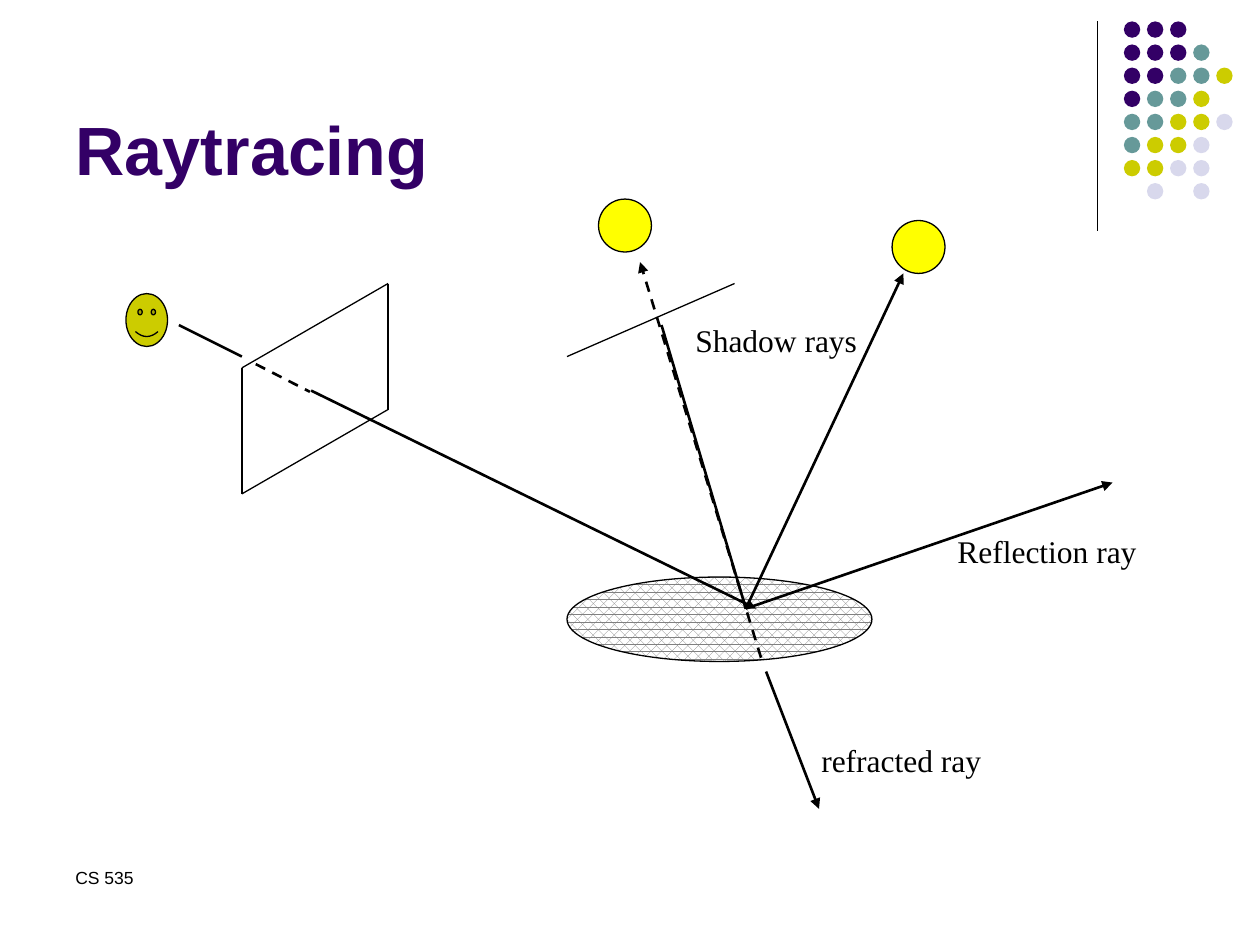
from lxml.etree import SubElement
from pptx import Presentation
from pptx.dml.color import RGBColor
from pptx.enum.dml import MSO_LINE, MSO_PATTERN
from pptx.enum.shapes import MSO_CONNECTOR, MSO_SHAPE
from pptx.enum.text import MSO_ANCHOR, MSO_AUTO_SIZE, PP_ALIGN
from pptx.oxml.ns import qn
from pptx.util import Inches, Pt

COLORS = {
    "black": "000000", "white": "FFFFFF", "gray": "808080", "yellow": "FFFF00",
    "purple": "330066", "teal": "669999", "olive": "CCCC00", "lavender": "D8D8EC",
}

# One letter per dot, a space where the grid is empty
DOT_ROWS = ["PPP", "PPPT", "PPTTO", "PTTO", "TTOOL", "TOOL", "OOLL", " L L"]
DOT_COLORS = {"P": "purple", "T": "teal", "O": "olive", "L": "lavender"}
DOT_LEFT, DOT_TOP, DOT_SIZE, DOT_PITCH = 8.92, 0.17, 0.13, 0.55 / 3

DIVIDER = ((8.71, 0.17), (8.71, 1.83))
SCREEN_CORNERS = [(1.92, 2.92), (3.08, 2.25), (3.08, 3.25), (1.92, 3.92)]
BLOCKER = ((4.5, 2.83), (5.83, 2.25))
EYE = (1, 2.33, 0.33, 0.42)
SURFACE = (4.5, 4.58, 2.42, 0.67)
LIGHTS = [(7.08, 1.75, 0.42, 0.42), (4.75, 1.58, 0.42, 0.42)]

HIT = (5.92, 4.83)
# start, end, dashed, arrow
RAYS = [
    ((2.47, 3.1), (6, 4.83), False, True),
    ((1.42, 2.58), (1.92, 2.83), False, False),
    ((2.03, 2.89), (2.46, 3.11), True, False),
    (HIT, (5.08, 2.08), True, True),
    (HIT, (5.25, 2.58), False, False),
    (HIT, (7.17, 2.17), False, True),
    (HIT, (8.83, 3.83), False, True),
    ((6.08, 5.33), (6.5, 6.42), False, True),
    ((6.04, 5.22), HIT, True, False),
]

# text, place, font, size
LABELS = [
    ("CS 535", (0.5, 6.83, 2.33, 0.5), "Arial", 10),
    ("Shadow rays", (5.42, 2.5, 1.5, 0.4), "Times New Roman", 18),
    ("Reflection ray", (7.5, 4.17, 1.92, 0.4), "Times New Roman", 18),
    ("refracted ray", (6.42, 5.83, 1.92, 0.4), "Times New Roman", 18),
]


def rgb(name):
    return RGBColor.from_string(COLORS[name])


def inches(values):
    return [Inches(value) for value in values]


def add_line(shapes, start, end, width=0.75, dashed=False, arrow=False):
    connector = shapes.add_connector(MSO_CONNECTOR.STRAIGHT, *inches(start + end))
    line = connector.line
    line.color.rgb = rgb("black")
    line.width = Pt(width)
    if dashed:
        line.dash_style = MSO_LINE.DASH
    if arrow:
        SubElement(line._get_or_add_ln(), qn("a:tailEnd"), type="triangle")
    SubElement(connector._element.spPr, qn("a:effectLst"))


def add_figure(shapes, kind, place, fill=None, outlined=True):
    figure = shapes.add_shape(kind, *inches(place))
    figure.shadow.inherit = False
    if fill:
        figure.fill.solid()
        figure.fill.fore_color.rgb = rgb(fill)
    if outlined:
        figure.line.color.rgb = rgb("black")
        figure.line.width = Pt(0.75)
    else:
        figure.line.fill.background()
    return figure


def style_font(para, name, size, color="black", bold=False):
    font = para.font
    font.name, font.size, font.bold = name, Pt(size), bold
    font.color.rgb = rgb(color)


def add_title(slide):
    title = slide.shapes.title
    title.left, title.top, title.width, title.height = inches((0.5, 0.13, 8.25, 1.42))
    frame = title.text_frame
    frame.text = "Raytracing"
    frame.vertical_anchor = MSO_ANCHOR.BOTTOM
    frame.auto_size = MSO_AUTO_SIZE.NONE
    para = frame.paragraphs[0]
    para.alignment = PP_ALIGN.LEFT
    style_font(para, "Arial", 39, "purple", bold=True)


def add_dots(shapes):
    dots = shapes.add_group_shape().shapes
    for row, letters in enumerate(DOT_ROWS):
        for column, letter in enumerate(letters):
            if letter != " ":
                place = (DOT_LEFT + column * DOT_PITCH, DOT_TOP + row * DOT_PITCH,
                         DOT_SIZE, DOT_SIZE)
                add_figure(dots, MSO_SHAPE.OVAL, place, DOT_COLORS[letter], outlined=False)


def add_scene(shapes):
    eye = add_figure(shapes, MSO_SHAPE.SMILEY_FACE, EYE, "olive")
    eye.adjustments[0] = 0.05
    for start, end in zip(SCREEN_CORNERS, SCREEN_CORNERS[1:] + SCREEN_CORNERS[:1]):
        add_line(shapes, start, end)
    surface = add_figure(shapes, MSO_SHAPE.OVAL, SURFACE)
    surface.fill.patterned()
    surface.fill.pattern = MSO_PATTERN.PERCENT_60
    surface.fill.fore_color.rgb = rgb("gray")
    surface.fill.back_color.rgb = rgb("white")
    for light in LIGHTS:
        add_figure(shapes, MSO_SHAPE.OVAL, light, "yellow")
    add_line(shapes, *BLOCKER)
    for start, end, dashed, arrow in RAYS:
        add_line(shapes, start, end, 1.5, dashed, arrow)


def add_labels(shapes):
    for text, place, font_name, size in LABELS:
        box = shapes.add_textbox(*inches(place))
        box.text_frame.word_wrap = True
        box.text_frame.text = text
        style_font(box.text_frame.paragraphs[0], font_name, size)


def main():
    deck = Presentation()
    deck.slide_width, deck.slide_height = Inches(10), Inches(7.5)
    slide = deck.slides.add_slide(deck.slide_layouts.get_by_name("Title Only"))
    add_line(slide.shapes, *DIVIDER)
    add_dots(slide.shapes)
    add_title(slide)
    add_scene(slide.shapes)
    add_labels(slide.shapes)
    deck.save("out.pptx")


if __name__ == "__main__":
    main()
